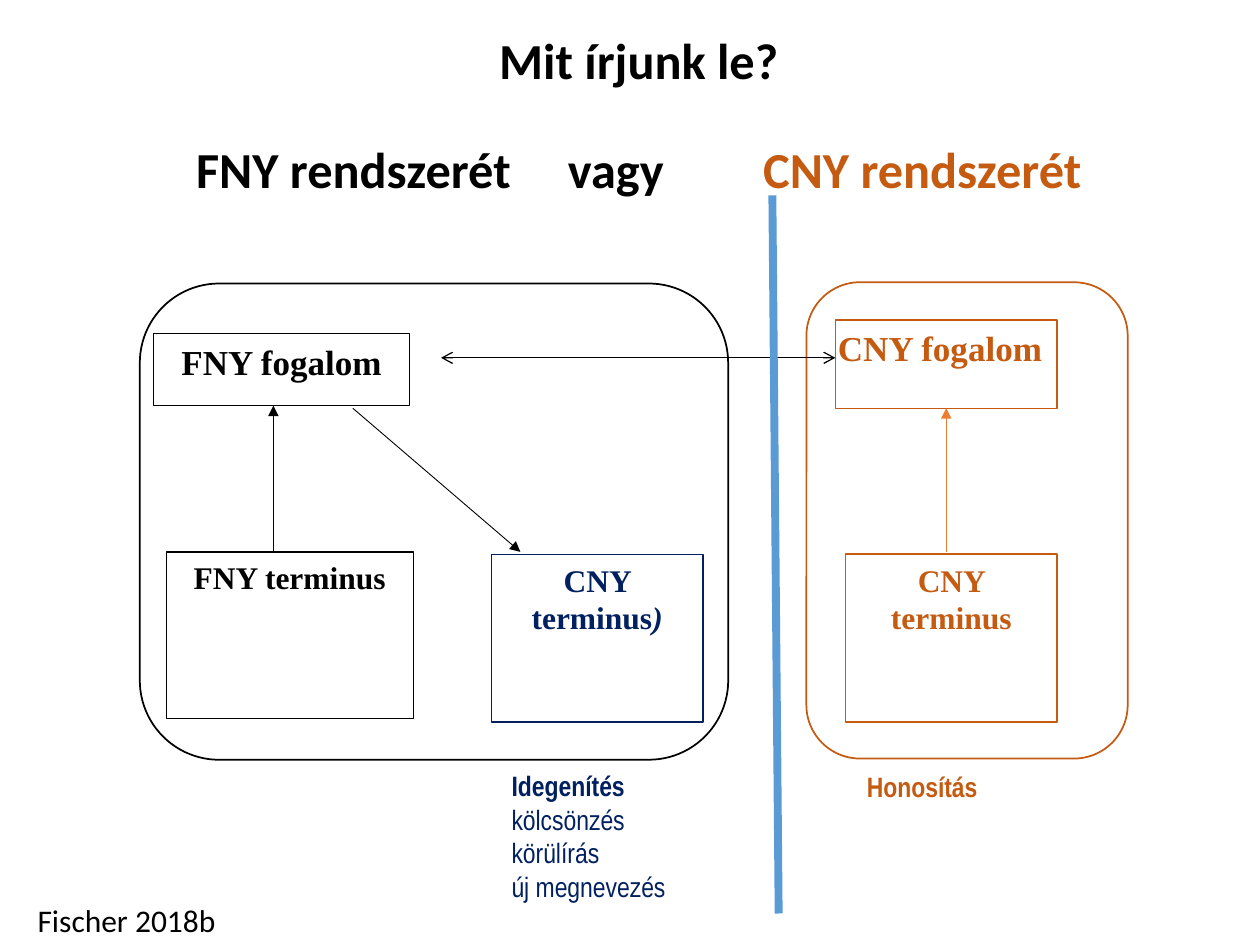
from copy import deepcopy

from lxml import etree
from pptx import Presentation
from pptx.dml.color import RGBColor
from pptx.enum.shapes import MSO_CONNECTOR, MSO_SHAPE
from pptx.enum.text import MSO_ANCHOR, MSO_AUTO_SIZE, PP_ALIGN
from pptx.oxml.ns import qn
from pptx.util import Inches, Pt

RECT, ROUNDED = MSO_SHAPE.RECTANGLE, MSO_SHAPE.ROUNDED_RECTANGLE
STRAIGHT = MSO_CONNECTOR.STRAIGHT
CENTER, LEFT = PP_ALIGN.CENTER, PP_ALIGN.LEFT
TOP, MIDDLE = MSO_ANCHOR.TOP, MSO_ANCHOR.MIDDLE
BOTTOM_SITE = 2

BLACK, NAVY, RUST = "000000", "002060", "C55A11"
ORANGE, BLUE, WHITE = "ED7D31", "5B9BD5", "FFFFFF"
SERIF, SANS, NARROW = "Times New Roman", "Calibri", "Arial Narrow"
INSETS = (0.1, 0.05, 0.1, 0.05)
LABEL_INSETS = (0.02, 0.05, 0.02, 0.05)

# Content: title lines hold (text, colour) runs
TITLE_LINES = [
    [("Mit írjunk le?", BLACK)],
    [],
    [("FNY rendszerét\t     vagy\t\t", BLACK), ("CNY rendszerét", RUST)],
]
# key: (left, top, width, height), colour, line width, size, insets, (text, italic) runs
BOXES = {
    "fny_concept": ((1.22, 2.65, 2.03, 0.57), BLACK, 0.75, 20, INSETS,
                    [("FNY fogalom", False)]),
    "fny_term": ((1.32, 4.38, 1.96, 1.32), BLACK, 0.75, 18, INSETS,
                 [("FNY terminus", False)]),
    "borrowed_term": ((3.9, 4.4, 1.68, 1.33), NAVY, 0.75, 18, INSETS,
                      [("CNY terminus", False), (")", True)]),
    "cny_concept": ((6.63, 2.54, 1.76, 0.7), RUST, 0.75, 20, (0, 0.05, 0.1, 0.05),
                    [("CNY fogalom", False)]),
    "cny_term": ((6.71, 4.4, 1.68, 1.33), RUST, 1, 18, INSETS,
                 [("CNY terminus", False)]),
}
FRAMES = [((1.11, 2.25, 4.67, 3.78), BLACK), ((6.4, 2.24, 2.55, 3.78), RUST)]
# start, end, colour, width, head, tail, box whose bottom the line meets
LINES = [
    ((2.17, 4.38), (2.17, 3.22), BLACK, 0.75, None, "triangle", None),
    ((2.8, 3.24), (4.13, 4.38), BLACK, 0.5, None, "triangle", None),
    ((3.5, 2.84), (6.63, 2.84), BLACK, 0.75, "arrow", "arrow", None),
    ((7.51, 4.38), (7.51, 3.24), ORANGE, 0.5, None, "triangle", "cny_concept"),
    ((6.13, 1.55), (6.18, 7.25), BLUE, 4.5, None, None, None),
]
# place, colour, size, font, insets, wrap, (text, bold) paragraphs
LABELS = [
    ((4.04, 6.05, 3.14, 3.69), NAVY, 16, NARROW, LABEL_INSETS, True,
     [("Idegenítés", True), ("kölcsönzés", False), ("körülírás", False),
      ("új megnevezés", False)]),
    ((6.86, 6.06, 3.14, 3.69), RUST, 16, NARROW, LABEL_INSETS, True,
     [("Honosítás", True)]),
    ((0.2, 7.1, 1.63, 0.4), BLACK, 18, SANS, INSETS, False,
     [("Fischer 2018b", False)]),
]


def rgb(code):
    return RGBColor.from_string(code)


def add_run(paragraph, text, font, size, color, bold=True, italic=False):
    run = paragraph.add_run()
    run.text = text
    run.font.name, run.font.size = font, Pt(size)
    run.font.bold, run.font.italic = bold, italic
    run.font.color.rgb = rgb(color)
    return run


def set_frame(frame, insets, wrap=True, anchor=TOP):
    frame.word_wrap, frame.vertical_anchor = wrap, anchor
    (frame.margin_left, frame.margin_top,
     frame.margin_right, frame.margin_bottom) = map(Inches, insets)


def add_outlined(slide, kind, place, color, width, fill=None):
    shape = slide.shapes.add_shape(kind, *map(Inches, place))
    shape.shadow.inherit = False
    if fill:
        shape.fill.solid()
        shape.fill.fore_color.rgb = rgb(fill)
    else:
        shape.fill.background()
    shape.line.color.rgb, shape.line.width = rgb(color), Pt(width)
    return shape


def add_line(slide, start, end, color, width, head, tail):
    line = slide.shapes.add_connector(STRAIGHT, *map(Inches, start + end))
    line.line.color.rgb, line.line.width = rgb(color), Pt(width)
    outline = line.line._get_or_add_ln()
    for tag, arrow in (("a:headEnd", head), ("a:tailEnd", tail)):
        if arrow:
            etree.SubElement(outline, qn(tag), type=arrow)
    etree.SubElement(line._element.spPr, qn("a:effectLst"))
    return line


def fill_title(title):
    title.left, title.top, title.width, title.height = map(
        Inches, (0.76, 0.21, 8.62, 1.45))
    frame = title.text_frame
    set_frame(frame, INSETS, anchor=MIDDLE)
    frame.auto_size = MSO_AUTO_SIZE.NONE
    paragraph = frame.paragraphs[0]
    paragraph.alignment, paragraph.line_spacing = CENTER, 0.9
    for number, runs in enumerate(TITLE_LINES):
        if number:
            paragraph.add_line_break()
        for text, color in runs:
            add_run(paragraph, text, SANS, 28.8, color)
    # Line breaks take the size of the text around them
    style = paragraph.runs[0].font._element
    for line_break in paragraph._p.findall(qn("a:br")):
        line_break.append(deepcopy(style))


def main():
    prs = Presentation()
    prs.slide_width, prs.slide_height = Inches(10), Inches(7.5)
    slide = prs.slides.add_slide(prs.slide_layouts[5])
    fill_title(slide.shapes.title)

    # Concept and term boxes
    boxes = {}
    for key, (place, color, width, size, insets, runs) in BOXES.items():
        box = add_outlined(slide, RECT, place, color, width, WHITE)
        set_frame(box.text_frame, insets)
        paragraph = box.text_frame.paragraphs[0]
        paragraph.alignment = CENTER
        for text, italic in runs:
            add_run(paragraph, text, SERIF, size, color, italic=italic)
        boxes[key] = box

    # Rounded frames around the two systems
    for place, color in FRAMES:
        add_outlined(slide, ROUNDED, place, color, 1)

    # Arrows and divider
    for *line_spec, target in LINES:
        line = add_line(slide, *line_spec)
        if target:
            line.end_connect(boxes[target], BOTTOM_SITE)

    # Labels and source
    for place, color, size, font, insets, wrap, paragraphs in LABELS:
        frame = slide.shapes.add_textbox(*map(Inches, place)).text_frame
        set_frame(frame, insets, wrap)
        for number, (text, bold) in enumerate(paragraphs):
            paragraph = frame.add_paragraph() if number else frame.paragraphs[0]
            paragraph.alignment = LEFT
            add_run(paragraph, text, font, size, color, bold)

    prs.save("out.pptx")


if __name__ == "__main__":
    main()
